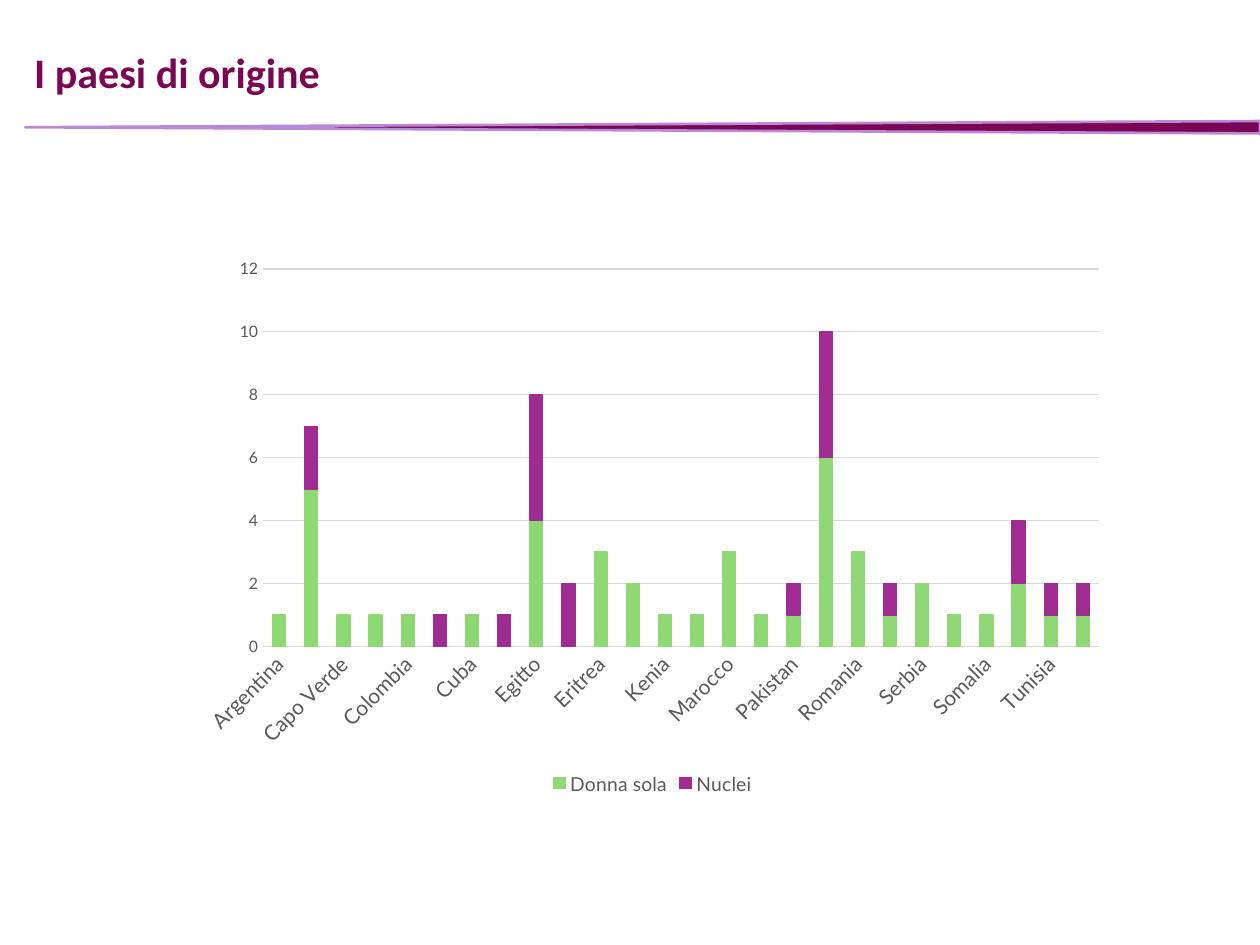
from pptx import Presentation
from pptx.chart.data import CategoryChartData as Data
from pptx.dml.color import RGBColor as RGB
from pptx.enum.chart import XL_CHART_TYPE as Kind, XL_LEGEND_POSITION as Spot, XL_TICK_MARK as Tick
from pptx.enum.shapes import MSO_SHAPE as Form
from pptx.enum.text import MSO_ANCHOR as Anchor, MSO_AUTO_SIZE as Auto, PP_ALIGN as Align
from pptx.util import Cm, Pt


def paint(part, tone):
    part.solid()
    part.fore_color.rgb = RGB.from_string(tone)


def style(font, face, size, tone):
    font.name = face
    font.size = Pt(size)
    paint(font.fill, tone)


deck = Presentation()
deck.slide_width, deck.slide_height = Cm(25.4), Cm(19.05)
slide = deck.slides.add_slide(deck.slide_layouts[5])

title = slide.shapes.title
title.left, title.top, title.width, title.height = Cm(0.51), Cm(0.58), Cm(23.83), Cm(1.85)
frame = title.text_frame
frame.auto_size = Auto.NONE
frame.word_wrap = True
frame.vertical_anchor = Anchor.MIDDLE
frame.margin_left = frame.margin_right = Cm(0.18)
frame.margin_top = frame.margin_bottom = Cm(0.1)
para = frame.paragraphs[0]
para.alignment = Align.LEFT
para.line_spacing = 0.9
run = para.add_run()
run.text = "I paesi di origine"
style(run.font, "Calibri", 24, "7B0754")
run.font.bold = True

rows = [
    ("Argentina", 1, None), ("Bangladesh", 5, 2), ("Capo Verde", 1, None),
    ("Cile", 1, None), ("Colombia", 1, None), ("Costa d'Avorio", 0, 1),
    ("Cuba", 1, None), ("Ecuador", 0, 1), ("Egitto", 4, 4),
    ("El Slavador", 0, 2), ("Eritrea", 3, None), ("Francia", 2, None),
    ("Kenia", 1, None), ("Macedonia", 1, None), ("Marocco", 3, None),
    ("Nigeria", 1, None), ("Pakistan", 1, 1), ("Perù", 6, 4),
    ("Romania", 3, None), ("Senegal", 1, 1), ("Serbia", 2, None),
    ("Siria", 1, None), ("Somalia", 1, None), ("Sri Lanka", 2, 2),
    ("Tunisia", 1, 1), ("Ucraina", 1, 1),
]
lands, alone, groups = zip(*rows)
data = Data()
data.categories = lands
data.add_series("Donna sola", alone)
data.add_series("Nuclei", groups)
chart = slide.shapes.add_chart(
    Kind.COLUMN_STACKED, Cm(3.78), Cm(5), Cm(18.75), Cm(11.13), data).chart
style(chart.font, "Lato", 10, "000000")
chart.has_title = False

plot = chart.plots[0]
plot.gap_width, plot.overlap = 150, 100
plot.vary_by_categories = False
for bars, tone in zip(plot.series, ("8ED973", "A02B93")):
    paint(bars.format.fill, tone)
    paint(bars.format.line.fill, tone)
    bars.format.line.width = Pt(0.75)
    bars.invert_if_negative = False

base, scale = chart.category_axis, chart.value_axis
for axis, size in ((base, 12), (scale, 9)):
    axis.major_tick_mark = axis.minor_tick_mark = Tick.NONE
    style(axis.tick_labels.font, "Lato", size, "595959")
scale.has_major_gridlines = True
for line in (base.format.line, scale.major_gridlines.format.line):
    paint(line.fill, "D9D9D9")
    line.width = Pt(0.75)
scale.format.line.fill.background()
scale.minimum_scale, scale.maximum_scale, scale.major_unit = 0, 12, 2
base._element.txPr.bodyPr.set("rot", "-2700000")

chart.has_legend = True
chart.legend.position = Spot.BOTTOM
chart.legend.include_in_layout = False
style(chart.legend.font, "Lato", 11, "595959")

wedge = slide.shapes.add_shape(
    Form.FLOWCHART_EXTRACT, Cm(12.83), Cm(-9.88), Cm(0.25), Cm(24.89))
wedge.rotation = 270
wedge.shadow.inherit = False
paint(wedge.fill, "7B0754")
paint(wedge.line.fill, "B889DB")
wedge.line.width = Pt(1.5)

deck.save("out.pptx")
